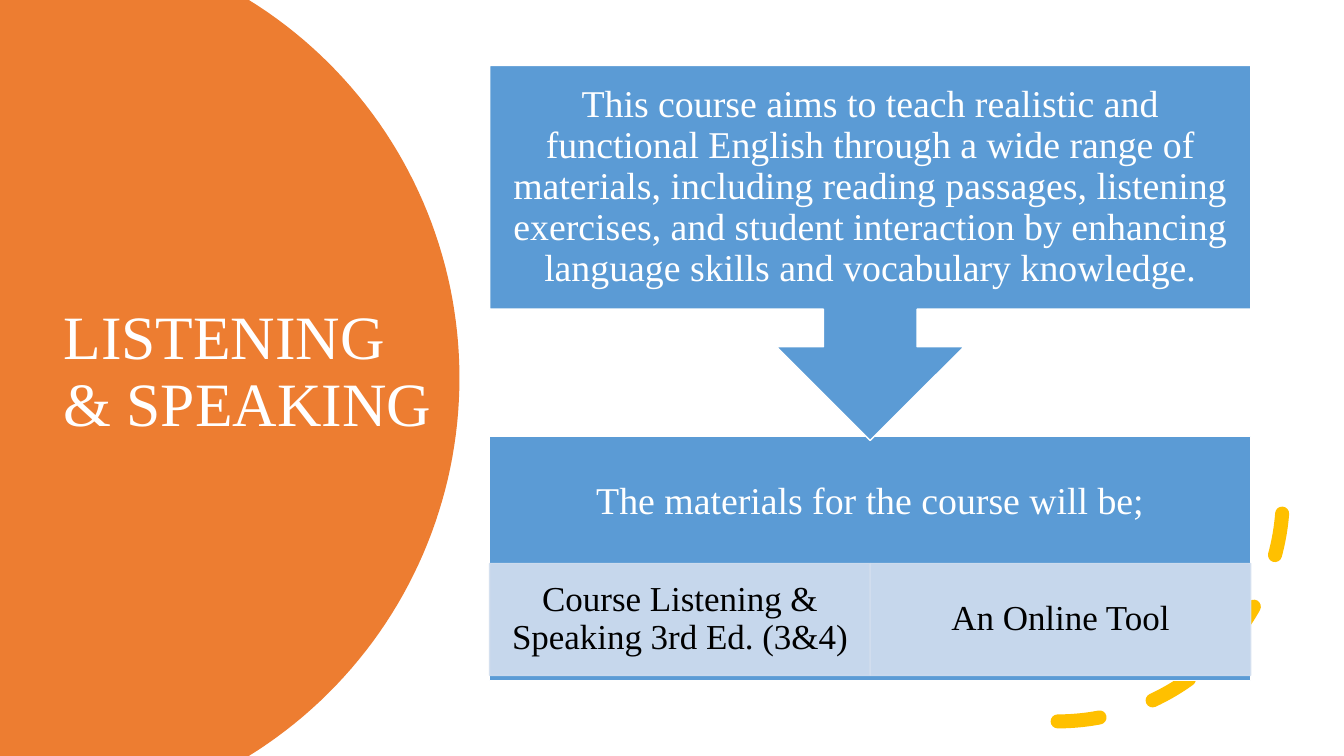
"""Build the Listening & Speaking course slide."""
from dataclasses import dataclass
from math import asin, cos, sin

from lxml.etree import SubElement
from pptx import Presentation
from pptx.dml.color import RGBColor
from pptx.enum.dml import MSO_LINE_DASH_STYLE as Dash
from pptx.enum.shapes import MSO_SHAPE as Kind
from pptx.enum.text import MSO_ANCHOR as Anchor, PP_ALIGN as Align
from pptx.oxml.ns import qn
from pptx.util import Cm, Pt

FONT = "Times New Roman"
WHITE, BLACK, BLUE, PALE = "FFFFFF", "000000", "5B9BD5", "D2DEEF"
ORANGE, GOLD = "ED7D31", "FFC000"
WIDE, HIGH = 33.87, 19.05
LEFT, SPAN = 12.34, 19.18
HALF = SPAN / 2


@dataclass
class Box:
    kind: Kind
    left: float
    top: float
    width: float
    height: float
    fill: str
    line: str
    turn: int = 0
    alpha: int = 100


@dataclass
class Label:
    text: str
    size: int
    color: str
    align: Align = Align.CENTER
    side: float = 0.53
    edge: float = 0.53
    foot: float = 0.53


def paint(part, color: str, alpha: int = 100) -> None:
    part.solid()
    part.fore_color.rgb = RGBColor.from_string(color)
    if alpha < 100:
        for tone in part._xPr.iter(qn("a:srgbClr")):
            SubElement(tone, qn("a:alpha")).set("val", str(alpha * 1000))


def place(shape, left: float, top: float, width: float, height: float) -> None:
    shape.left, shape.top = Cm(left), Cm(top)
    shape.width, shape.height = Cm(width), Cm(height)


def write(shape, label: Label) -> None:
    frame = shape.text_frame
    frame.text = label.text
    frame.word_wrap = True
    frame.vertical_anchor = Anchor.MIDDLE
    frame.margin_left = frame.margin_right = Cm(label.side)
    frame.margin_top, frame.margin_bottom = Cm(label.edge), Cm(label.foot)
    para = frame.paragraphs[0]
    para.alignment = label.align
    para.line_spacing = 0.9
    font = para.runs[0].font
    font.name, font.size = FONT, Pt(label.size)
    font.color.rgb = RGBColor.from_string(label.color)


def draw(slide, box: Box):
    shape = slide.shapes.add_shape(box.kind, 0, 0, 0, 0)
    place(shape, box.left, box.top, box.width, box.height)
    shape.rotation = box.turn
    shape.shadow.inherit = False
    paint(shape.fill, box.fill, box.alpha)
    paint(shape.line.fill, box.line, box.alpha)
    shape.line.width = Pt(1)
    return shape


def disc(slide):
    mid, ray, steps = 0.38, 11.2, 80
    reach = asin(HIGH / 2 / ray)
    turns = [reach * (2 * i / steps - 1) for i in range(steps + 1)]
    rim = [(Cm(mid + ray * cos(t)), Cm(HIGH / 2 + ray * sin(t))) for t in turns]
    pen = slide.shapes.build_freeform(0, 0)
    pen.add_line_segments(rim + [(0, Cm(HIGH))])
    shape = pen.convert_to_shape()
    shape.shadow.inherit = False
    paint(shape.fill, ORANGE)
    shape.line.fill.background()
    return shape


def arc(slide) -> None:
    shape = slide.shapes.add_shape(Kind.ARC, 0, 0, 0, 0)
    place(shape, 20.98, 6.83, 11.35, 11.35)
    shape.shadow.inherit = False
    shape.fill.background()
    line = shape.line
    paint(line.fill, GOLD)
    line.width = Pt(10)
    line.dash_style = Dash.DASH
    props = shape.element.spPr
    props.find(qn("a:ln")).set("cap", "rnd")
    props.find(qn("a:xfrm")).set("flipV", "1")


def main() -> None:
    deck = Presentation()
    deck.slide_width, deck.slide_height = Cm(WIDE), Cm(HIGH)
    slide = deck.slides.add_slide(deck.slide_layouts[5])

    title = slide.shapes.title
    title.element.addprevious(disc(slide).element)
    place(title, 1.35, 3.2, 9.88, 12.4)
    write(title, Label("LISTENING & SPEAKING", 44, WHITE, Align.LEFT, 0.25, 0.13, 0.13))
    arc(slide)

    base = draw(slide, Box(Kind.RECTANGLE, LEFT, 11, SPAN, 6.15, BLUE, WHITE))
    write(base, Label("The materials for the course will be;", 27, WHITE, foot=3.36))

    items = ["Course Listening & Speaking 3rd Ed. (3&4)", "An Online Tool"]
    for i, text in enumerate(items):
        tile = Box(Kind.RECTANGLE, LEFT + i * HALF, 14.2, HALF, 2.82, PALE, PALE, alpha=90)
        write(draw(slide, tile), Label(text, 25, BLACK, side=0.48, edge=0.08, foot=0.08))

    draw(slide, Box(Kind.UP_ARROW_CALLOUT, LEFT, 1.65, SPAN, 9.45, BLUE, WHITE, 180))
    aim = slide.shapes.add_textbox(0, 0, 0, 0)
    place(aim, LEFT, 1.65, SPAN, 6.14)
    write(aim, Label(
        "This course aims to teach realistic and functional English through a wide "
        "range of materials, including reading passages, listening exercises, and "
        "student interaction by enhancing language skills and vocabulary knowledge.",
        27, WHITE))
    deck.save("out.pptx")


if __name__ == "__main__":
    main()
